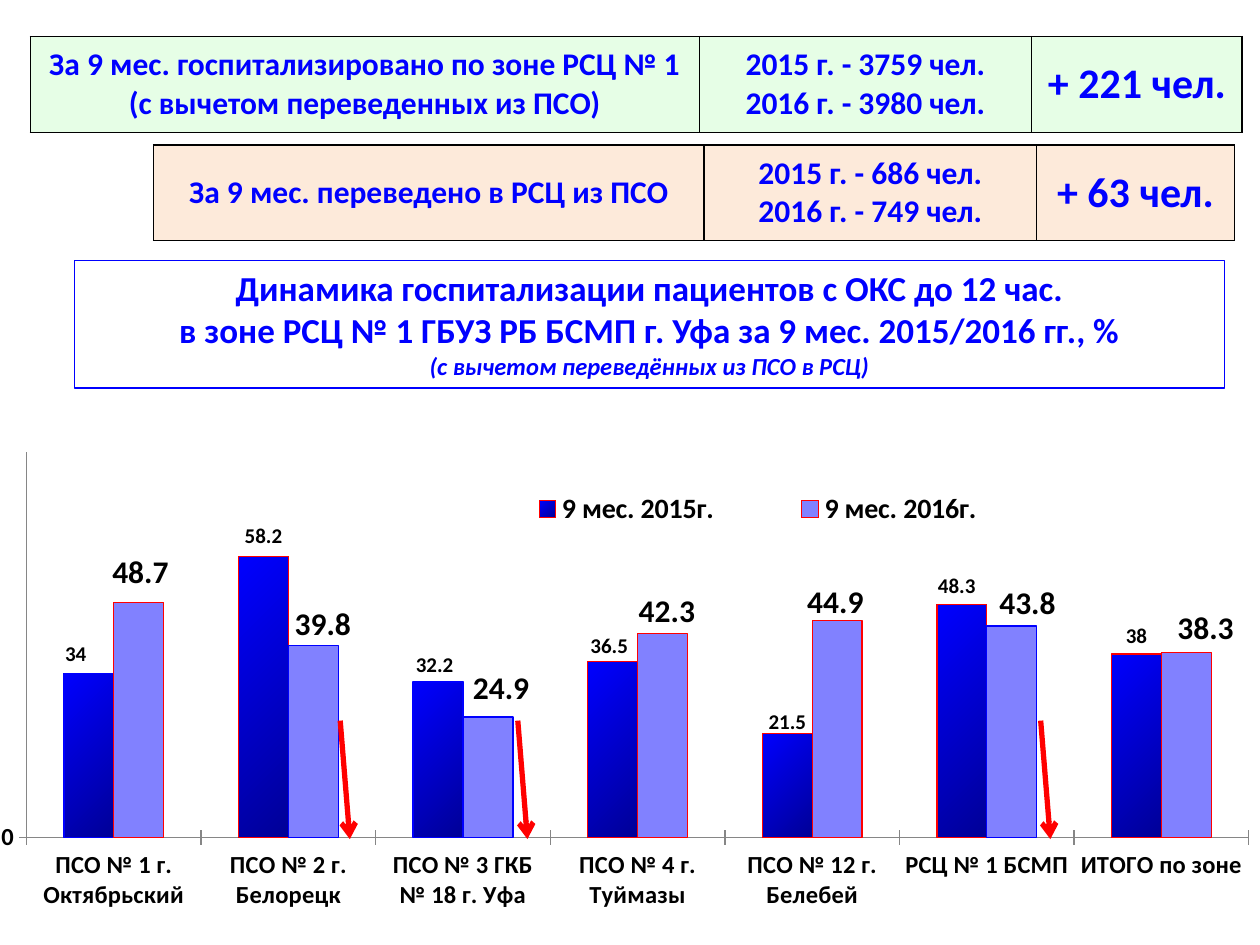
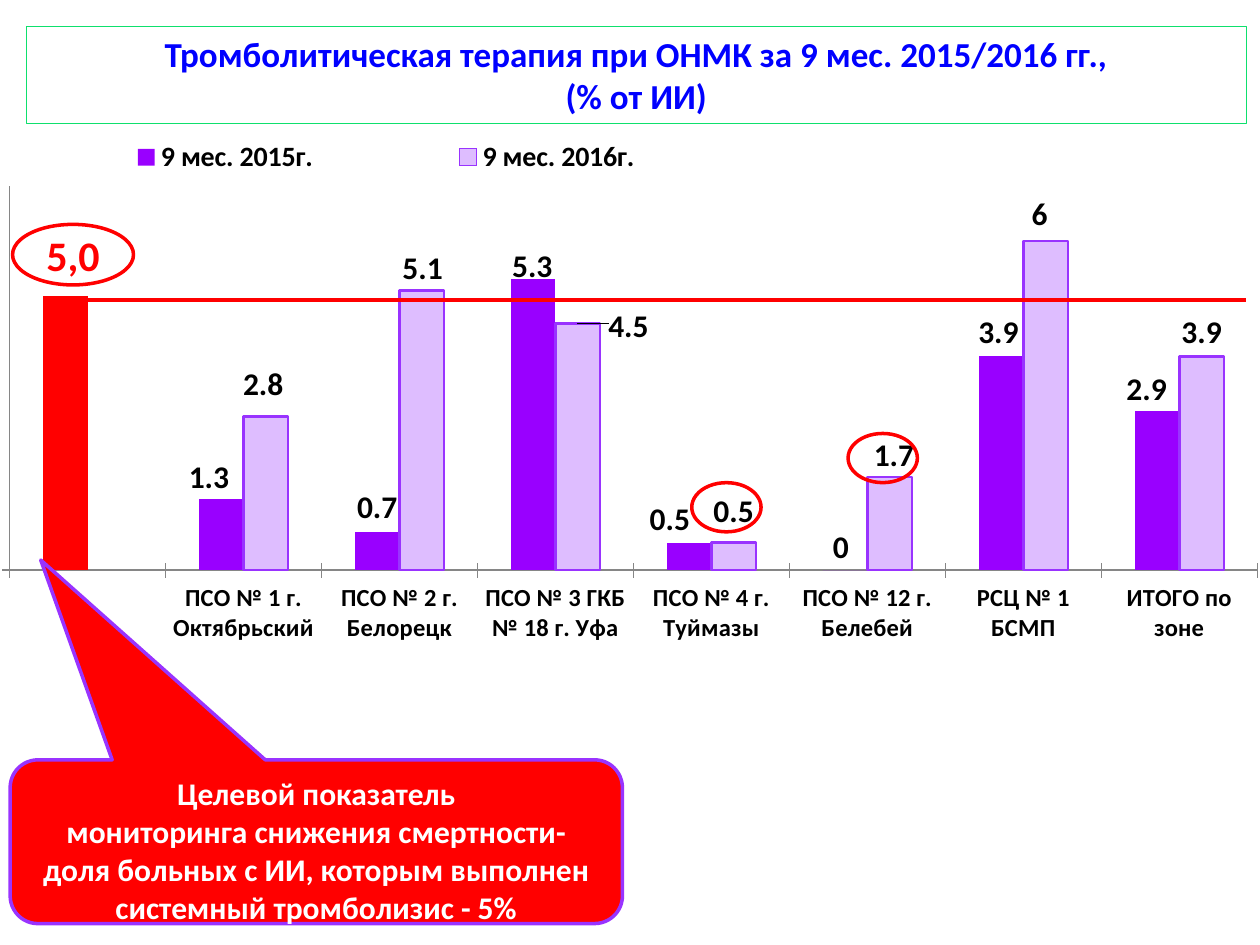
from dataclasses import dataclass, field
from typing import Optional

import pptx
import pptx.chart.data
import pptx.dml.color
import pptx.enum.chart
import pptx.enum.shapes
import pptx.enum.text
import pptx.oxml
import pptx.oxml.ns
import pptx.util

Pt = pptx.util.Pt
qn = pptx.oxml.ns.qn
SHAPE = pptx.enum.shapes.MSO_SHAPE
ANCHOR = pptx.enum.text.MSO_ANCHOR
FONT = "Calibri"
COLORS = {
    "white": "FFFFFF", "black": "000000", "blue": "0000FF", "navy": "000097",
    "periwinkle": "8181FF", "red": "FF0000", "green": "0EE06D", "mint": "E6FEE6",
    "peach": "FDEADA", "violet": "9900FF", "lilac": "DEBDFF", "purple": "9933FF",
    "axis": "868686",
}
Box = tuple[float, float, float, float]
Offset = Optional[tuple[float, float]]


@dataclass
class Line:
    text: str
    size: float
    italic: bool = False


@dataclass
class Cell:
    width: float
    lines: list[Line]


@dataclass
class Series:
    """Label offsets are points from the default place; None hides the label."""
    name: str
    values: list[Optional[float]]
    fill: str
    label_size: float
    offsets: list[Offset]
    line: Optional[str] = None
    line_width: float = 0.75
    gradient_from: Optional[str] = None
    point_fills: dict[int, str] = field(default_factory=dict)
    point_lines: dict[int, str] = field(default_factory=dict)


@dataclass
class Chart:
    box: Box
    categories: list[str]
    series: list[Series]
    maximum: float
    major: float
    plot: Box
    legend: Box
    show_scale: bool


def rgb(name: str) -> pptx.dml.color.RGBColor:
    return pptx.dml.color.RGBColor.from_string(COLORS[name])


def set_fill(fill, name: Optional[str]) -> None:
    if name is None:
        fill.background()
    else:
        fill.solid()
        fill.fore_color.rgb = rgb(name)


def set_line(line, name: str, width: float) -> None:
    set_fill(line.fill, name)
    line.width = Pt(width)


def set_font(font, *, size: float, color: str = "black", bold: bool = True, italic: bool = False) -> None:
    font.name, font.size, font.bold, font.italic = FONT, Pt(size), bold, italic
    font.color.rgb = rgb(color)


def write_text(tf, lines: list[Line], *, color: str = "blue") -> None:
    for i, line in enumerate(lines):
        p = tf.paragraphs[0] if i == 0 else tf.add_paragraph()
        p.alignment = pptx.enum.text.PP_ALIGN.CENTER
        r = p.add_run()
        r.text = line.text
        set_font(r.font, size=line.size, color=color, italic=line.italic)


def add_shape(s, kind, box: Box, *, line: str, width: float = 2, fill: Optional[str] = None,
              lines: Optional[list[Line]] = None, color: str = "blue", anchor=ANCHOR.TOP):
    sp = s.shapes.add_shape(kind, *map(Pt, box))
    sp.shadow.inherit = False
    set_fill(sp.fill, fill)
    set_line(sp.line, line, width)
    if lines:
        tf = sp.text_frame
        tf.word_wrap = True
        tf.vertical_anchor = anchor
        write_text(tf, lines, color=color)
    return sp


def add_title(s, box: Box, border: str, lines: list[Line]) -> None:
    add_shape(s, SHAPE.RECTANGLE, box, line=border, width=0.75, fill="white", lines=lines)


def add_line(s, x1: float, y1: float, x2: float, y2: float, *, width: float, arrow: bool = False) -> None:
    c = s.shapes.add_connector(pptx.enum.shapes.MSO_CONNECTOR.STRAIGHT, *map(Pt, (x1, y1, x2, y2)))
    set_line(c.line, "red", width)
    if arrow:
        c.line._get_or_add_ln().append(make_xml("a:tailEnd", type="arrow"))
    c._element.spPr.append(make_xml("a:effectLst"))


def make_xml(tag: str, **attributes: str):
    element = pptx.oxml.parse_xml(f"<{tag} {pptx.oxml.ns.nsdecls(tag.split(':')[0])}/>")
    for name, value in attributes.items():
        element.set(name, value)
    return element


def border_cell(cell) -> None:
    """Put borders ahead of the fill, which the schema wants last."""
    props = cell._tc.get_or_add_tcPr()
    for i, side in enumerate(("L", "R", "T", "B")):
        ln = make_xml(f"a:ln{side}", w=str(Pt(1)))
        fill = make_xml("a:solidFill")
        fill.append(make_xml("a:srgbClr", val=COLORS["black"]))
        ln.append(fill)
        props.insert(i, ln)


def add_row_table(s, x: float, y: float, fill: str, cells: list[Cell]) -> None:
    height = 54.7
    total = sum(c.width for c in cells)
    table = s.shapes.add_table(1, len(cells), Pt(x), Pt(y), Pt(total), Pt(height)).table
    table.first_row = table.horz_banding = False
    for i, spec_cell in enumerate(cells):
        table.columns[i].width = Pt(spec_cell.width)
        cell = table.cell(0, i)
        cell.vertical_anchor = ANCHOR.MIDDLE
        set_fill(cell.fill, fill)
        border_cell(cell)
        write_text(cell.text_frame, spec_cell.lines)


def make_layout(*, inner: bool = False, edge: bool = True, **fractions: float):
    layout = make_xml("c:layout")
    manual = make_xml("c:manualLayout")
    layout.append(manual)
    if inner:
        manual.append(make_xml("c:layoutTarget", val="inner"))
    if edge:
        manual.extend([make_xml("c:xMode", val="edge"), make_xml("c:yMode", val="edge")])
    for name, value in fractions.items():
        manual.append(make_xml(f"c:{name}", val=f"{value:.4f}"))
    return layout


def place_layout(parent, layout, after: Optional[str] = None) -> None:
    for old in parent.findall(qn("c:layout")):
        parent.remove(old)
    if after is None:
        parent.insert(0, layout)
    else:
        parent.find(qn(after)).addnext(layout)


def style_labels(ser, data: Series, box: Box) -> None:
    outside = pptx.enum.chart.XL_LABEL_POSITION.OUTSIDE_END
    labels = ser.data_labels
    labels.show_value = True
    labels.position = outside
    set_font(labels.font, size=data.label_size)
    for i, offset in enumerate(data.offsets):
        if offset == (0, 0):
            continue
        label = ser.points[i].data_label
        set_font(label.font, size=data.label_size)
        label.position = outside
        dl = labels._element.xpath(f'c:dLbl[c:idx/@val="{i}"]')[0]
        if offset is None:
            dl.find(qn("c:showVal")).set("val", "0")
        else:
            layout = make_layout(edge=False, x=offset[0] / box[2], y=offset[1] / box[3])
            place_layout(dl, layout, after="c:idx")


def style_series(ser, data: Series, box: Box) -> None:
    ser.invert_if_negative = False
    set_fill(ser.format.fill, data.fill)
    if data.gradient_from:
        shade_fill(ser.format.fill, data)
    if data.line:
        set_line(ser.format.line, data.line, data.line_width)
    for i, fill in data.point_fills.items():
        set_fill(ser.points[i].format.fill, fill)
    for i, color in data.point_lines.items():
        point = ser.points[i].format
        if data.gradient_from:
            shade_fill(point.fill, data)
        else:
            set_fill(point.fill, data.fill)
        set_line(point.line, color, data.line_width)
    style_labels(ser, data, box)


def shade_fill(fill, data: Series) -> None:
    fill.gradient()
    fill.gradient_angle = 135
    for stop, name in zip(fill.gradient_stops, (data.gradient_from, data.fill)):
        stop.color.rgb = rgb(name)


def add_column_chart(s, data: Chart) -> None:
    chart_data = pptx.chart.data.CategoryChartData()
    chart_data.categories = data.categories
    for item in data.series:
        chart_data.add_series(item.name, item.values)
    kind = pptx.enum.chart.XL_CHART_TYPE.COLUMN_CLUSTERED
    chart = s.shapes.add_chart(kind, *map(Pt, data.box), chart_data).chart
    set_font(chart.font, size=18, bold=False)
    chart.has_title = False
    plot = chart.plots[0]
    plot.gap_width, plot.overlap, plot.vary_by_categories = 150, 0, False
    for ser, item in zip(plot.series, data.series):
        style_series(ser, item, data.box)

    for axis in (chart.category_axis, chart.value_axis):
        axis.major_tick_mark = pptx.enum.chart.XL_TICK_MARK.CROSS
        axis.has_major_gridlines = False
        set_font(axis.tick_labels.font, size=14)
        set_line(axis.format.line, "axis", 0.75)
    scale = chart.value_axis
    scale.minimum_scale, scale.maximum_scale, scale.major_unit = 0, data.maximum, data.major
    if not data.show_scale:
        scale.tick_label_position = pptx.enum.chart.XL_TICK_LABEL_POSITION.NONE

    chart.has_legend = True
    legend = chart.legend
    legend.position = pptx.enum.chart.XL_LEGEND_POSITION.TOP
    legend.include_in_layout = False
    set_font(legend.font, size=16)
    place_layout(legend._element, make_layout(**dict(zip("xywh", data.legend))), after="c:legendPos")
    area = chart._chartSpace.chart.plotArea
    place_layout(area, make_layout(inner=True, **dict(zip("xywh", data.plot))))


PERIODS = ("9 мес. 2015г.", "9 мес. 2016г.")
CENTERS = ["ПСО № 1 г. Октябрьский", "ПСО № 2 г. Белорецк", "ПСО № 3 ГКБ № 18 г. Уфа",
           "ПСО № 4 г. Туймазы", "ПСО № 12 г. Белебей", "РСЦ № 1 БСМП", "ИТОГО по зоне"]

ADMISSIONS = Chart(
    (-28.8, 216, 784.8, 324), CENTERS,
    [Series(PERIODS[0], [34, 58.2, 32.2, 36.5, 21.5, 48.3, 38], "blue", 12,
            [(-7.5, -1), (0, -2), (-2, 0.5), (-2, 1.5), (0, 3.5), (-3, -0.5), (0, 0)],
            line="red", gradient_from="navy", point_lines={0: "blue", 2: "blue"}),
     Series(PERIODS[1], [48.7, 39.8, 24.9, 42.3, 44.9, 43.8, 38.3], "periwinkle", 18,
            [(1, -3.5), (5.5, 1.5), (7.5, -2.5), (2.5, 1), (-1, 3), (9, 0.5), (11, 0)],
            line="red", point_lines={1: "blue", 2: "blue", 5: "blue"})],
    80, 100, (0.056, 0.13, 0.89, 0.68), (0.372, 0.194, 0.433, 0.075), True)

THROMBOLYSIS = Chart(
    (-27.4, 66.2, 747.4, 369.4), [" "] + CENTERS,
    [Series(PERIODS[0], [5, 1.3, 0.7, 5.3, 0.5, 0, 3.9, 2.9], "violet", 18,
            [None, (-7, 1.5), (0, 0), (-0.5, 6), (-11, 0.5), (-2.5, 0.5), (-1.5, 0), (-6, 1.5)],
            point_fills={0: "red"}),
     Series(PERIODS[1], [None, 2.8, 5.1, 4.5, 0.5, 1.7, 6, 3.9], "lilac", 18,
            [None, (-1.5, -4.5), (0.5, 1), (29, 15.5), (0, -4), (2.5, 1.5), (-3.5, -1.5), (0, 0)],
            line="purple", line_width=1.5)],
    7, 18, (0.044, 0.109, 0.954, 0.594), (0.037, 0.03, 0.59, 0.068), False)


def build_admissions(s) -> None:
    add_title(s, (42.5, 149, 657.4, 72.7), "blue", [
        Line("Динамика госпитализации пациентов с ОКС до 12 час.", 20),
        Line("в зоне РСЦ № 1 ГБУЗ РБ БСМП г. Уфа за 9 мес. 2015/2016 гг., %", 20),
        Line("(с вычетом переведённых из ПСО в РСЦ)", 14, italic=True)])
    add_row_table(s, 87.8, 82.8, "peach", [
        Cell(314.6, [Line("За 9 мес. переведено в РСЦ из ПСО", 18)]),
        Cell(190, [Line("2015 г. - 686 чел.", 18), Line("2016 г. - 749 чел.", 18)]),
        Cell(113, [Line("+ 63 чел.", 24)])])
    add_column_chart(s, ADMISSIONS)
    for x in (194.4, 295.9, 594.7):
        add_line(s, x, 411.8, x + 5.5, 479.5, width=3, arrow=True)
    add_row_table(s, 17.3, 20.9, "mint", [
        Cell(382.3, [Line("За 9 мес. госпитализировано по зоне РСЦ № 1 (с вычетом переведенных из ПСО)", 18)]),
        Cell(190, [Line("2015 г. - 3759 чел.", 18), Line("2016 г. - 3980 чел.", 18)]),
        Cell(120.2, [Line("+ 221 чел.", 24)])])


def build_thrombolysis(s) -> None:
    add_title(s, (15.1, 15.1, 697, 55.4), "green", [
        Line("Тромболитическая терапия при ОНМК за 9 мес. 2015/2016 гг.,", 20), Line("(% от ИИ)", 20)])
    add_column_chart(s, THROMBOLYSIS)
    add_shape(s, SHAPE.OVAL, (7.2, 128.2, 69.1, 34.6), line="red", fill="white",
              lines=[Line("5,0", 24)], color="red", anchor=ANCHOR.MIDDLE)
    add_line(s, 26.6, 171.4, 712.1, 171.4, width=2)
    for x, y in ((484.6, 247.7), (395.3, 275.8)):
        add_shape(s, SHAPE.OVAL, (x, y, 39.6, 28.1), line="red")
    target = ("Целевой показатель", "мониторинга снижения смертности-",
              "доля больных с ИИ, которым выполнен системный тромболизис - 5%")
    callout = add_shape(s, SHAPE.ROUNDED_RECTANGULAR_CALLOUT, (5.8, 434.2, 349.9, 93.6), line="purple",
                        fill="red", lines=[Line(text, 18) for text in target], color="white")
    for i, value in enumerate((-0.45, -1.72, 0.17)):
        callout.adjustments[i] = value


def main() -> None:
    prs = pptx.Presentation()
    prs.slide_width, prs.slide_height = Pt(720), Pt(540)
    for build in (build_admissions, build_thrombolysis):
        build(prs.slides.add_slide(prs.slide_layouts[6]))
    prs.save("out.pptx")


if __name__ == "__main__":
    main()
